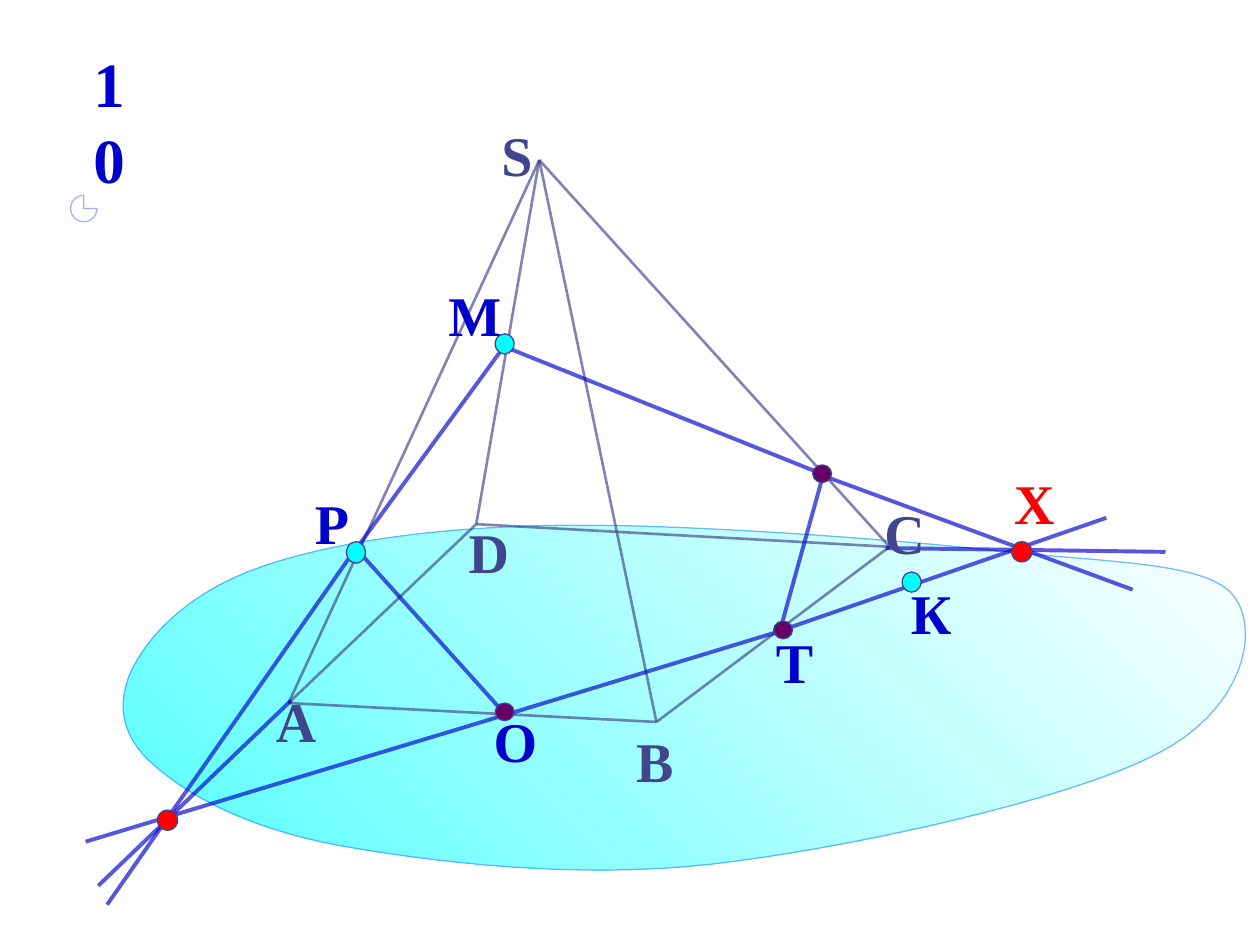
"""Build a slide with the section of a pyramid by a plane through M, P and K."""
from lxml import etree
from pptx import Presentation
from pptx.dml.color import RGBColor
from pptx.enum.shapes import MSO_CONNECTOR, MSO_SHAPE
from pptx.enum.text import MSO_ANCHOR, PP_ALIGN
from pptx.oxml.ns import qn
from pptx.util import Inches, Pt

STRAIGHT = MSO_CONNECTOR.STRAIGHT
OVAL = MSO_SHAPE.OVAL
PIE = MSO_SHAPE.PIE
CENTER = PP_ALIGN.CENTER
LEFT = PP_ALIGN.LEFT
MIDDLE = MSO_ANCHOR.MIDDLE
TOP = MSO_ANCHOR.TOP

COLORS = {
    "edge": "40458C",
    "section": "0000CC",
    "given": "00FFFF",
    "found": "660066",
    "trace": "FF0000",
    "plane_line": "3399FF",
    "white": "FFFFFF",
    "ornament": "6F89F7",
}
FONT = {"name": "Times New Roman", "bold": True}
OPACITY = 65

PLANE_START = (1.06, 5.29)
PLANE_CURVES = [
    ((1.2, 5.02), (1.52, 4.69), (2.07, 4.5)),
    ((2.62, 4.31), (3.39, 4.19), (4.37, 4.17)),
    ((5.36, 4.15), (7.1, 4.28), (8, 4.38)),
    ((8.9, 4.47), (9.61, 4.47), (9.8, 4.74)),
    ((10, 5.01), (9.87, 5.64), (9.17, 5.99)),
    ((8.48, 6.35), (6.71, 6.74), (5.63, 6.86)),
    ((4.55, 6.98), (3.43, 6.84), (2.69, 6.71)),
    ((1.95, 6.57), (1.49, 6.31), (1.22, 6.07)),
    ((0.95, 5.84), (0.92, 5.56), PLANE_START),
]
CURVE_STEPS = 16

VERTICES = {
    "S": (4.28, 1.27),
    "A": (2.29, 5.58),
    "B": (5.21, 5.73),
    "C": (7.06, 4.34),
    "D": (3.78, 4.16),
}
EDGES = ["SA", "AB", "BC", "SC", "SB", "SD", "AD", "DC"]

SECTION_LINES = [
    ((9.25, 4.38), (7.03, 4.35)),
    ((8.78, 4.11), (6.21, 5)),
    ((6.22, 5), (3.99, 5.68)),
    ((4.02, 5.68), (2.85, 4.38)),
    ((6.2, 4.97), (6.53, 3.78)),
    ((8.99, 4.68), (6.49, 3.76)),
    ((6.57, 3.78), (4, 2.75)),
    ((4, 2.75), (2.78, 4.42)),
    ((3.99, 5.68), (0.68, 6.68)),
    ((2.77, 4.43), (0.85, 7.18)),
    ((2.31, 5.56), (0.78, 7.03)),
]

DOTS = [
    (7.16, 4.54, 0.15, 0.16, "given"),
    (8.03, 4.3, 0.16, 0.16, "trace"),
    (2.75, 4.3, 0.15, 0.17, "given"),
    (6.14, 4.93, 0.15, 0.14, "found"),
    (6.45, 3.69, 0.15, 0.14, "found"),
    (3.93, 2.65, 0.15, 0.16, "given"),
    (3.93, 5.58, 0.15, 0.14, "found"),
    (1.25, 6.43, 0.16, 0.16, "trace"),
]

LABELS = [
    ("Р", 2.4, 3.83, 0.47, "section"),
    ("О", 3.82, 5.56, 0.55, "section"),
    ("Т", 6.06, 4.93, 0.5, "section"),
    ("А", 2.09, 5.4, 0.52, "edge"),
    ("В", 4.95, 5.72, 0.5, "edge"),
    ("С", 6.92, 3.91, 0.52, "edge"),
    ("S", 3.88, 0.91, 0.45, "edge"),
    ("D", 3.62, 4.06, 0.52, "edge"),
    ("К", 7.13, 4.54, 0.52, "section"),
    ("М", 3.46, 2.18, 0.62, "section"),
    ("X", 7.95, 3.67, 0.52, "trace"),
]


def rgb(name):
    """Return the named colour."""
    return RGBColor.from_string(COLORS[name])


def make_translucent(shape):
    """Give every colour of a shape the common opacity."""
    for color in shape._element.iter(qn("a:srgbClr")):
        etree.SubElement(color, qn("a:alpha")).set("val", str(OPACITY * 1000))


def set_line(shape, color, width):
    """Set the colour and the width in points of an outline."""
    shape.line.color.rgb = rgb(color)
    shape.line.width = Pt(width)


def bezier_points(start, curves):
    """Return points along a chain of cubic curves."""
    points = []
    for first, second, end in curves:
        for step in range(1, CURVE_STEPS + 1):
            t = step / CURVE_STEPS
            weights = ((1 - t) ** 3, 3 * t * (1 - t) ** 2, 3 * t * t * (1 - t), t ** 3)
            corners = (start, first, second, end)
            points.append(tuple(
                Inches(sum(w * corner[axis] for w, corner in zip(weights, corners)))
                for axis in (0, 1)
            ))
        start = end
    return points


def add_plane(slide):
    """Draw the rounded base plane with its gradient."""
    builder = slide.shapes.build_freeform(*(Inches(value) for value in PLANE_START))
    builder.add_line_segments(bezier_points(PLANE_START, PLANE_CURVES), close=True)
    plane = builder.convert_to_shape()
    plane.shadow.inherit = False
    plane.fill.gradient()
    plane.fill.gradient_angle = 45
    for stop, color, position in zip(plane.fill.gradient_stops, ("given", "white"), (0, 1)):
        stop.color.rgb = rgb(color)
        stop.position = position
    set_line(plane, "plane_line", 0.75)
    make_translucent(plane)


def add_line(slide, start, end, color, width):
    """Draw a translucent straight line."""
    ends = [Inches(value) for value in (*start, *end)]
    line = slide.shapes.add_connector(STRAIGHT, *ends)
    set_line(line, color, width)
    etree.SubElement(line._element.spPr, qn("a:effectLst"))
    make_translucent(line)


def add_dot(slide, left, top, width, height, color):
    """Draw the marker of a point."""
    dot = slide.shapes.add_shape(OVAL, *map(Inches, (left, top, width, height)))
    dot.shadow.inherit = False
    dot.fill.solid()
    dot.fill.fore_color.rgb = rgb(color)
    set_line(dot, "edge", 0.75)


def add_ornament(slide):
    """Draw the open three-quarter pie below the number."""
    pie = slide.shapes.add_shape(PIE, *map(Inches, (0.56, 1.55, 0.21, 0.21)))
    pie.shadow.inherit = False
    pie.fill.background()
    set_line(pie, "ornament", 0.75)
    make_translucent(pie)


def add_label(slide, text, box, color, size=32, align=LEFT, anchor=TOP):
    """Write a bold label in a box of left, top, width and height."""
    frame = slide.shapes.add_textbox(*map(Inches, box)).text_frame
    frame.word_wrap = True
    frame.vertical_anchor = anchor
    paragraph = frame.paragraphs[0]
    paragraph.alignment = align
    run = paragraph.add_run()
    run.text = text
    for attribute, value in {**FONT, "size": Pt(size)}.items():
        setattr(run.font, attribute, value)
    run.font.color.rgb = rgb(color)


def main():
    """Build the slide and save it."""
    presentation = Presentation()
    presentation.slide_width = Inches(10)
    presentation.slide_height = Inches(7.5)
    slide = presentation.slides.add_slide(presentation.slide_layouts[6])
    add_ornament(slide)
    add_plane(slide)
    for start, end in EDGES:
        add_line(slide, VERTICES[start], VERTICES[end], "edge", 1.5)
    for start, end in SECTION_LINES:
        add_line(slide, start, end, "section", 2.25)
    for dot in DOTS:
        add_dot(slide, *dot)
    for text, left, top, width, color in LABELS:
        add_label(slide, text, (left, top, width, 0.63), color)
    add_label(slide, "10", (0.59, 0.6, 0.55, 0.71), "section", 36, CENTER, MIDDLE)
    presentation.save("out.pptx")


if __name__ == "__main__":
    main()
